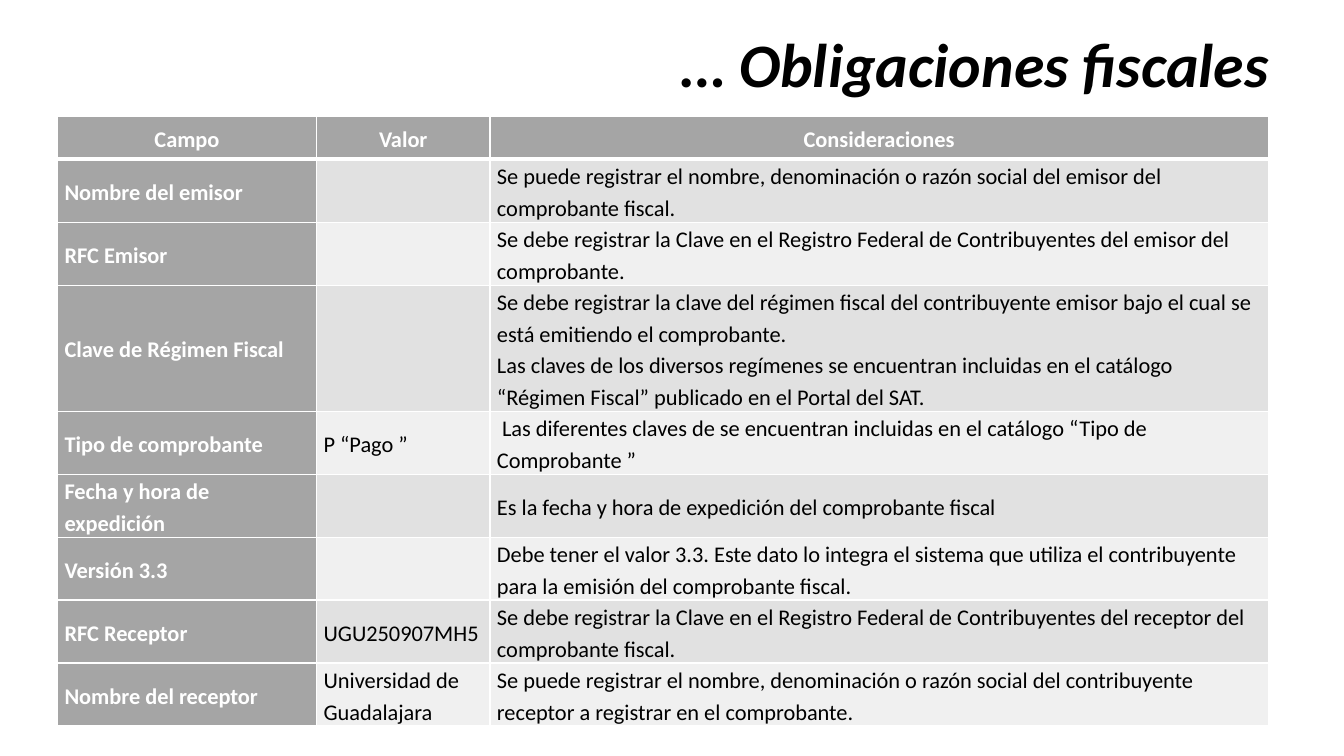
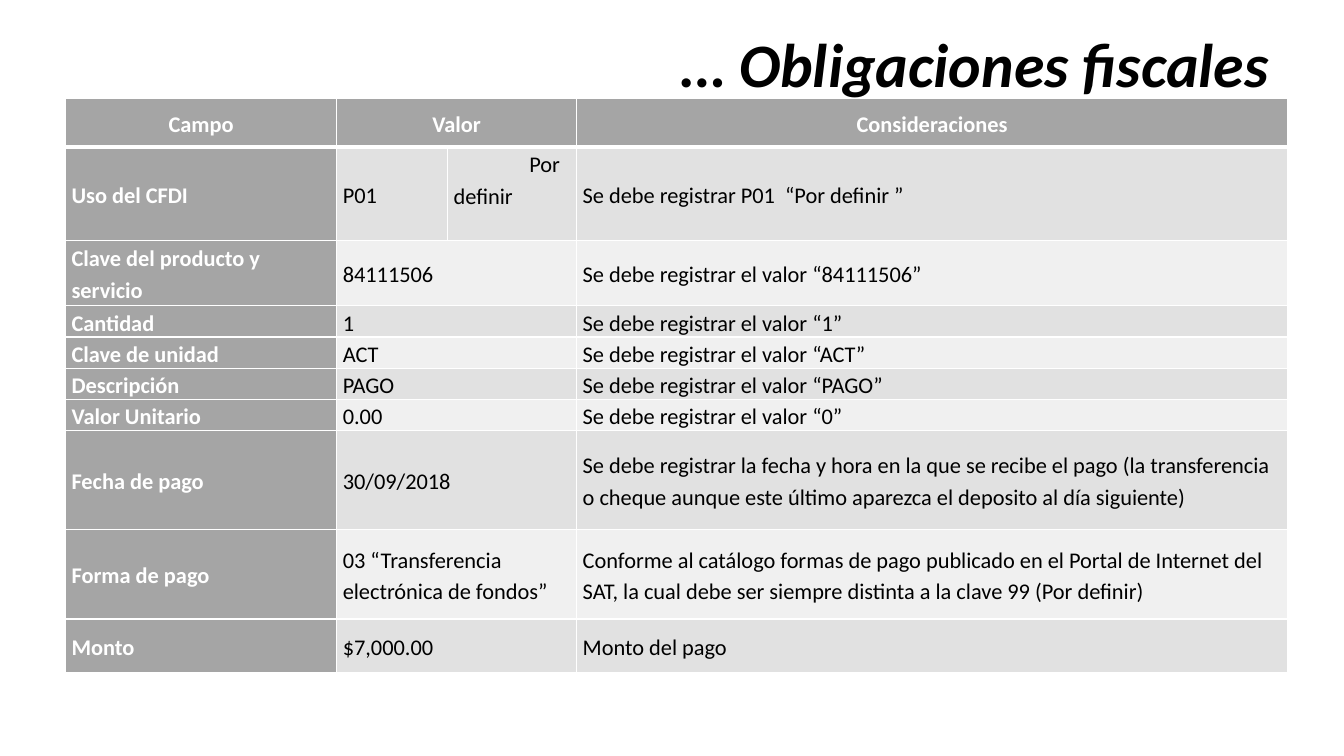
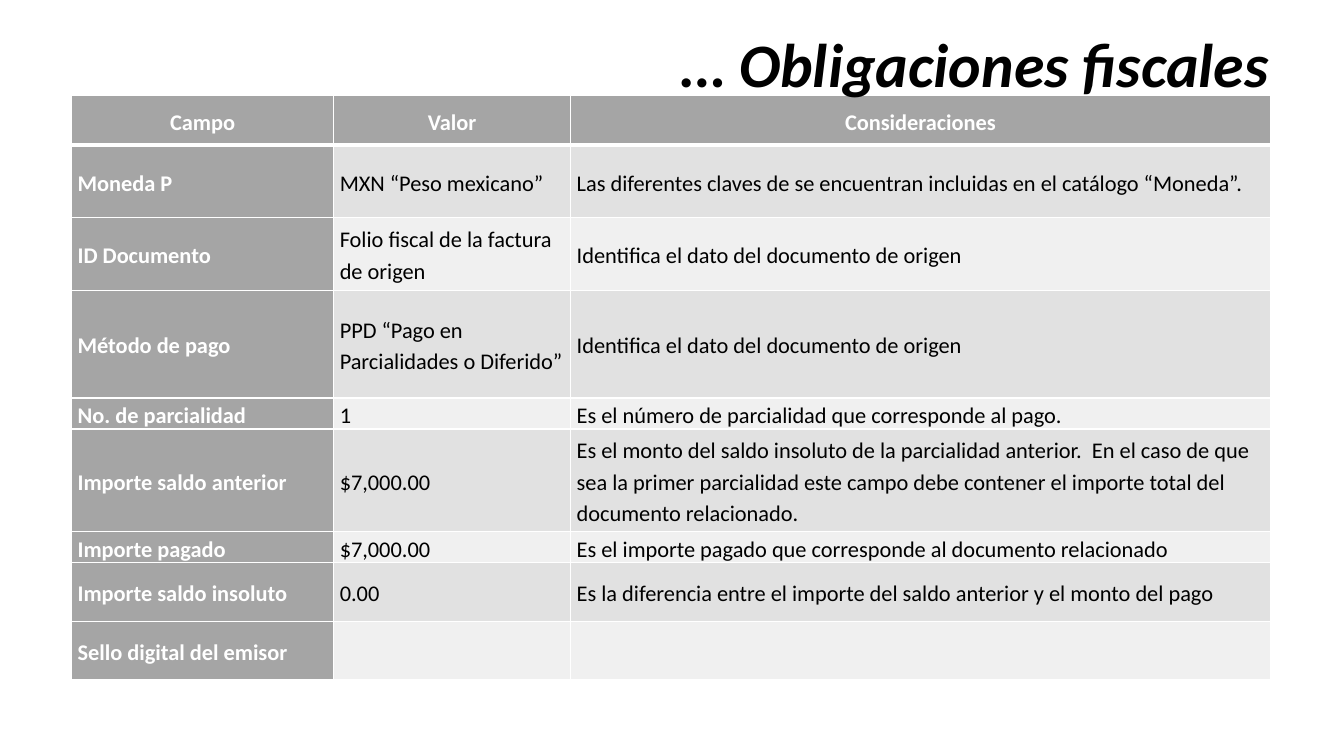
from dataclasses import dataclass

from lxml import etree
from pptx import Presentation
from pptx.dml.color import RGBColor
from pptx.enum.text import MSO_ANCHOR, PP_ALIGN
from pptx.oxml.ns import qn
from pptx.util import Inches, Pt

MIDDLE = MSO_ANCHOR.MIDDLE
LEFT, CENTER, RIGHT = PP_ALIGN.LEFT, PP_ALIGN.CENTER, PP_ALIGN.RIGHT


@dataclass(frozen=True)
class Theme:
    font: str = "Calibri"
    title_size: float = 44.1
    table_size: float = 16
    title_spacing: float = 0.9
    table_spacing: float = 1.15
    black: str = "000000"
    white: str = "FFFFFF"
    heading: str = "A5A5A5"
    bands: tuple = ("E1E1E1", "F0F0F0")
    thin: float = 1
    thick: float = 3


@dataclass(frozen=True)
class Indented:
    text: str
    indent: float
    bottom: float = 0


@dataclass(frozen=True)
class FieldTable:
    left: float
    top: float
    inset: float
    columns: tuple
    rows: tuple
    entries: tuple


THEME = Theme()
SLIDE_SIZE = (13.33, 7.5)
TITLE = "… Obligaciones fiscales"
TITLE_BOX = (-0.18, 0.26, 12.87, 0.82)
HEADINGS = ("Campo", "Valor", "Consideraciones")

ISSUER_FIELDS = FieldTable(
    0.57, 1.15, 0.07,
    (2.57, 1.72, 7.72),
    (0.43, 0.56, 0.56, 1.12, 0.58, 0.56, 0.57, 0.56, 0.57),
    (
        ("Nombre del emisor", "",
         "Se puede registrar el nombre, denominación o razón social del emisor del comprobante fiscal."),
        ("RFC Emisor", "",
         "Se debe registrar la Clave en el Registro Federal de Contribuyentes del emisor del comprobante."),
        ("Clave de Régimen Fiscal", "",
         "Se debe registrar la clave del régimen fiscal del contribuyente emisor bajo el cual se "
         "está emitiendo el comprobante.\n"
         "Las claves de los diversos regímenes se encuentran incluidas en el catálogo "
         "“Régimen Fiscal” publicado en el Portal del SAT."),
        ("Tipo de comprobante", "P “Pago ”",
         Indented("Las diferentes claves de se encuentran incluidas en el catálogo “Tipo de Comprobante ”", 0.05)),
        ("Fecha y hora de expedición", "",
         "Es la fecha y hora de expedición del comprobante fiscal"),
        ("Versión 3.3", "",
         "Debe tener el valor 3.3. Este dato lo integra el sistema que utiliza el contribuyente "
         "para la emisión del comprobante fiscal."),
        ("RFC Receptor", "UGU250907MH5",
         "Se debe registrar la Clave en el Registro Federal de Contribuyentes del receptor del comprobante fiscal."),
        ("Nombre del receptor", "Universidad de Guadalajara",
         "Se puede registrar el nombre, denominación o razón social del contribuyente "
         "receptor a registrar en el comprobante."),
    ),
)

PAYMENT_FIELDS = FieldTable(
    0.65, 0.98, 0.06,
    (2.69, 1.1, 1.28, 7.05),
    (0.48, 0.92, 0.65, 0.31, 0.31, 0.31, 0.31, 0.98, 0.89, 0.53),
    (
        ("Uso del CFDI", "P01", Indented("Por definir", 0.75, 0.31),
         "Se debe registrar P01  “Por definir ”"),
        ("Clave del producto y servicio", "84111506", "Se debe registrar el valor “84111506”"),
        ("Cantidad", "1", "Se debe registrar el valor “1”"),
        ("Clave de unidad", "ACT", "Se debe registrar el valor “ACT”"),
        ("Descripción", "PAGO", "Se debe registrar el valor “PAGO”"),
        ("Valor Unitario", "0.00", "Se debe registrar el valor “0”"),
        ("Fecha de pago", "30/09/2018",
         "Se debe registrar la fecha y hora en la que se recibe el pago (la transferencia "
         "o cheque aunque este último aparezca el deposito al día siguiente)"),
        ("Forma de pago", "03 “Transferencia electrónica de fondos”",
         "Conforme al catálogo formas de pago publicado en el Portal de Internet del SAT, "
         "la cual debe ser siempre distinta a la clave 99 (Por definir)"),
        ("Monto", "$7,000.00", "Monto del pago"),
    ),
)

DOCUMENT_FIELDS = FieldTable(
    0.71, 0.95, 0.06,
    (2.6, 2.35, 6.94),
    (0.49, 0.72, 0.72, 1.07, 0.29, 1.02, 0.29, 0.58, 0.58),
    (
        ("Moneda P", "MXN “Peso mexicano”",
         "Las diferentes claves de se encuentran incluidas en el catálogo “Moneda”."),
        ("ID Documento", "Folio fiscal de la factura de origen",
         "Identifica el dato del documento de origen"),
        ("Método de pago", "PPD “Pago en Parcialidades o Diferido”",
         "Identifica el dato del documento de origen"),
        ("No. de parcialidad", "1", "Es el número de parcialidad que corresponde al pago."),
        ("Importe saldo anterior", "$7,000.00",
         "Es el monto del saldo insoluto de la parcialidad anterior.  En el caso de que "
         "sea la primer parcialidad este campo debe contener el importe total del documento relacionado."),
        ("Importe pagado", "$7,000.00",
         "Es el importe pagado que corresponde al documento relacionado"),
        ("Importe saldo insoluto", "0.00",
         "Es la diferencia entre el importe del saldo anterior y el monto del pago"),
        ("Sello digital del emisor", "", ""),
    ),
)


def style_paragraph(paragraph, size, color, bold, alignment, spacing, italic=False):
    paragraph.alignment = alignment
    paragraph.line_spacing = spacing
    font = paragraph.font
    font.name = THEME.font
    font.size = Pt(size)
    font.bold = bold
    font.italic = italic
    font.color.rgb = RGBColor.from_string(color)


def add_borders(cell, row_index):
    properties = cell._tc.get_or_add_tcPr()
    widths = {
        "L": THEME.thin,
        "R": THEME.thin,
        "T": THEME.thick if row_index == 1 else THEME.thin,
        "B": THEME.thick if row_index == 0 else THEME.thin,
    }
    for side, width in widths.items():
        line = etree.SubElement(properties, qn(f"a:ln{side}"), w=str(Pt(width)))
        fill = etree.SubElement(line, qn("a:solidFill"))
        etree.SubElement(fill, qn("a:srgbClr"), val=THEME.white)


def style_cell(cell, row_index, column_index, inset):
    is_heading = row_index == 0 or column_index == 0
    cell.vertical_anchor = MIDDLE
    cell.margin_left = cell.margin_right = Inches(inset)
    cell.margin_top = cell.margin_bottom = 0
    add_borders(cell, row_index)
    cell.fill.solid()
    band = THEME.bands[(row_index - 1) % 2]
    cell.fill.fore_color.rgb = RGBColor.from_string(THEME.heading if is_heading else band)
    for paragraph in cell.text_frame.paragraphs:
        style_paragraph(
            paragraph, THEME.table_size, THEME.white if is_heading else THEME.black,
            is_heading, CENTER if row_index == 0 else LEFT, THEME.table_spacing,
        )


def fill_cell(cell, entry):
    if isinstance(entry, Indented):
        cell.text = entry.text
        properties = cell.text_frame.paragraphs[0]._p.get_or_add_pPr()
        properties.set("indent", str(Inches(entry.indent)))
    else:
        cell.text = entry


def add_field_table(slide, fields):
    frame = slide.shapes.add_table(
        len(fields.rows), len(fields.columns), Inches(fields.left), Inches(fields.top),
        Inches(sum(fields.columns)), Inches(sum(fields.rows)),
    )
    table = frame.table
    table.first_row = table.horz_banding = False
    for column, width in zip(table.columns, fields.columns):
        column.width = Inches(width)
    for row, height in zip(table.rows, fields.rows):
        row.height = Inches(height)

    last = len(fields.columns) - 1
    for row_index, entries in enumerate((HEADINGS, *fields.entries)):
        if len(entries) <= last:
            table.cell(row_index, 1).merge(table.cell(row_index, last - 1))
        positions = (*range(len(entries) - 1), last)
        for column_index, entry in zip(positions, entries):
            fill_cell(table.cell(row_index, column_index), entry)
        for column_index in range(last + 1):
            style_cell(table.cell(row_index, column_index), row_index, column_index, fields.inset)
        for column_index, entry in zip(positions, entries):
            if isinstance(entry, Indented):
                table.cell(row_index, column_index).margin_bottom = Inches(entry.bottom)


def add_title(slide, box):
    title = slide.shapes.add_textbox(*(Inches(length) for length in box))
    text_frame = title.text_frame
    text_frame.word_wrap = True
    text_frame.vertical_anchor = MIDDLE
    text_frame.text = TITLE
    style_paragraph(
        text_frame.paragraphs[0], THEME.title_size, THEME.black, True, RIGHT,
        THEME.title_spacing, italic=True,
    )


def main():
    presentation = Presentation()
    presentation.slide_width, presentation.slide_height = (Inches(length) for length in SLIDE_SIZE)
    blank_layout = presentation.slide_layouts[6]
    for fields in (ISSUER_FIELDS, PAYMENT_FIELDS, DOCUMENT_FIELDS):
        slide = presentation.slides.add_slide(blank_layout)
        add_field_table(slide, fields)
        add_title(slide, TITLE_BOX)
    presentation.save("out.pptx")


if __name__ == "__main__":
    main()
